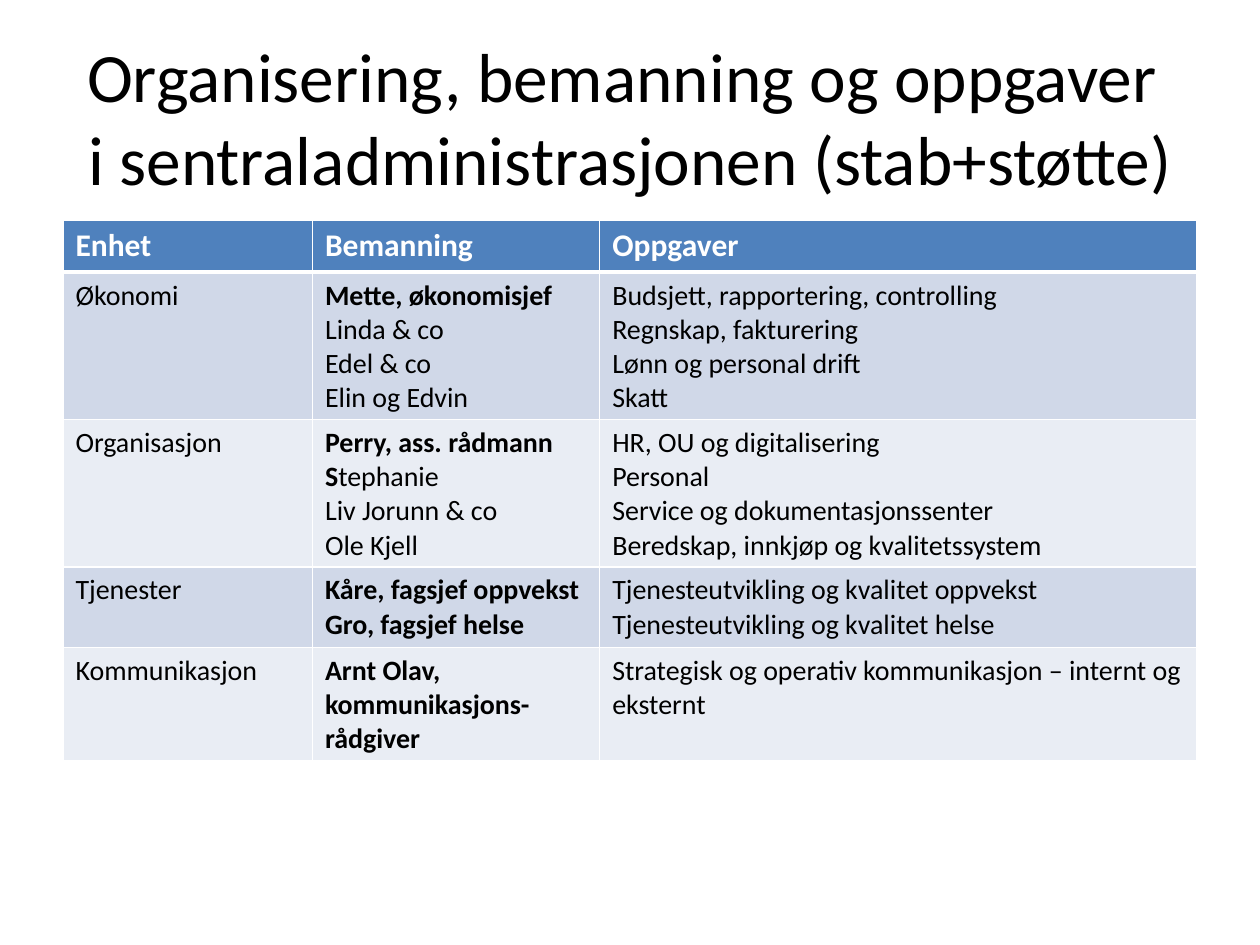
"""Build a slide with a table of units, staffing and tasks."""
from lxml.etree import SubElement
from pptx import Presentation
from pptx.dml.color import RGBColor
from pptx.enum.text import MSO_ANCHOR, PP_ALIGN
from pptx.oxml.ns import qn
from pptx.util import Inches, Pt

FONT = "Calibri"
BLACK = RGBColor(0x00, 0x00, 0x00)
WHITE = RGBColor(0xFF, 0xFF, 0xFF)
HEADER_BLUE = RGBColor(0x4F, 0x81, 0xBD)
BANDS = [RGBColor(0xD0, 0xD8, 0xE8), RGBColor(0xE9, 0xED, 0xF4)]

TITLE_LINES = ["Organisering, bemanning og oppgaver ",
               "i sentraladministrasjonen (stab+støtte)"]
HEADERS = ["Enhet", "Bemanning", "Oppgaver"]
UNITS = [
    {"unit": "Økonomi",
     "staff": [[("Mette, økonomisjef", True)], [("Linda & co", False)],
               [("Edel & co", False)], [("Elin og Edvin", False)]],
     "tasks": ["Budsjett, rapportering, controlling", "Regnskap, fakturering",
               "Lønn og personal drift", "Skatt"]},
    {"unit": "Organisasjon",
     "staff": [[("Perry, ass. rådmann S", True), ("tephanie", False)],
               [("Liv Jorunn & co", False)], [("Ole Kjell", False)]],
     "tasks": ["HR, OU og digitalisering", "Personal",
               "Service og dokumentasjonssenter",
               "Beredskap, innkjøp og kvalitetssystem"]},
    {"unit": "Tjenester",
     "staff": [[("Kåre, fagsjef oppvekst", True)], [("Gro, fagsjef helse", True)]],
     "tasks": ["Tjenesteutvikling og kvalitet oppvekst",
               "Tjenesteutvikling og kvalitet helse"]},
    {"unit": "Kommunikasjon",
     "staff": [[("Arnt Olav, kommunikasjons-rådgiver", True)]],
     "tasks": ["Strategisk og operativ kommunikasjon – internt og eksternt"]},
]
COLUMN_WIDTHS = [1.98, 2.28, 4.74]
ROW_HEIGHTS = [0.41, 1.17, 1.17, 0.64, 0.9]


def add_run(paragraph, text, size, color, bold=False):
    run = paragraph.add_run()
    run.text = text
    run.font.name = FONT
    run.font.size = Pt(size)
    run.font.bold = bold
    run.font.color.rgb = color


def add_borders(cell, bottom_width):
    properties = cell._tc.get_or_add_tcPr()
    for side, width in (("L", 1), ("R", 1), ("T", 1), ("B", bottom_width)):
        line = SubElement(properties, qn(f"a:ln{side}"), w=str(Pt(width)))
        fill = SubElement(line, qn("a:solidFill"))
        SubElement(fill, qn("a:srgbClr"), val=str(WHITE))


def fill_cell(cell, paragraphs, size, text_color, fill_color, bottom_width=1):
    add_borders(cell, bottom_width)
    cell.fill.solid()
    cell.fill.fore_color.rgb = fill_color
    frame = cell.text_frame
    for index, runs in enumerate(paragraphs):
        paragraph = frame.add_paragraph() if index else frame.paragraphs[0]
        for text, bold in runs:
            add_run(paragraph, text, size, text_color, bold)


def add_title(slide):
    shape = slide.shapes.add_textbox(Inches(0.5), Inches(0.3), Inches(9), Inches(1.25))
    frame = shape.text_frame
    frame.word_wrap = True
    frame.vertical_anchor = MSO_ANCHOR.MIDDLE
    paragraph = frame.paragraphs[0]
    paragraph.alignment = PP_ALIGN.CENTER
    for index, text in enumerate(TITLE_LINES):
        if index:
            paragraph.add_line_break()
        add_run(paragraph, text, 39.6, BLACK)


def add_unit_table(slide):
    table = slide.shapes.add_table(
        len(ROW_HEIGHTS), len(COLUMN_WIDTHS), Inches(0.5), Inches(1.75),
        Inches(sum(COLUMN_WIDTHS)), Inches(sum(ROW_HEIGHTS))).table
    for column, width in zip(table.columns, COLUMN_WIDTHS):
        column.width = Inches(width)
    for row, height in zip(table.rows, ROW_HEIGHTS):
        row.height = Inches(height)
    for column, header in enumerate(HEADERS):
        fill_cell(table.cell(0, column), [[(header, True)]], 18, WHITE, HEADER_BLUE, 3)
    for index, unit in enumerate(UNITS):
        tasks = [[(task, False)] for task in unit["tasks"]]
        contents = [[[(unit["unit"], False)]], unit["staff"], tasks]
        for column, paragraphs in enumerate(contents):
            fill_cell(table.cell(index + 1, column), paragraphs, 16, BLACK,
                      BANDS[index % len(BANDS)])


def main():
    presentation = Presentation()
    presentation.slide_width = Inches(10)
    presentation.slide_height = Inches(7.5)
    slide = presentation.slides.add_slide(presentation.slide_layouts[6])
    add_title(slide)
    add_unit_table(slide)
    presentation.save("out.pptx")


if __name__ == "__main__":
    main()
